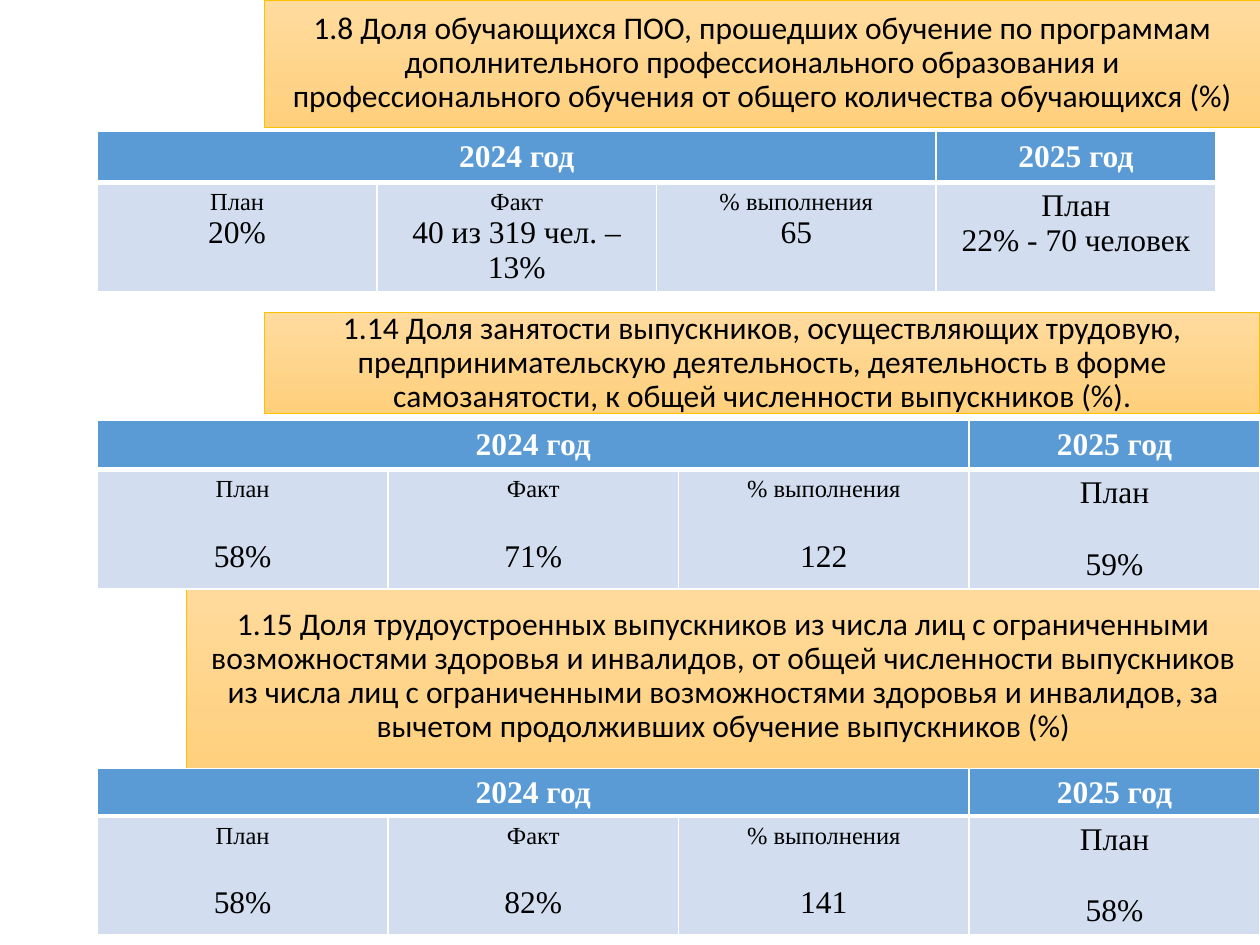
import pptx
import pptx.util
import pptx.dml.color
import pptx.enum.shapes
import pptx.enum.text
import pptx.oxml
import pptx.oxml.ns

Pt = pptx.util.Pt
CENTER = pptx.enum.text.PP_ALIGN.CENTER
MIDDLE = pptx.enum.text.MSO_ANCHOR.MIDDLE


def color(value):
    return pptx.dml.color.RGBColor.from_string(value)


class Deck:
    """Holds the style and the current slide, and draws its banners and tables."""

    black, white, gold = "000000", "FFFFFF", "FFC000"
    banner_top, banner_bottom = "FFDB9E", "FFD07C"
    head_fill, body_fill = "5B9BD5", "D2DEEF"
    heading_font, table_font = "Calibri", "Times New Roman"
    size, small = 18, 14

    def __init__(self, width, height):
        self.prs = pptx.Presentation()
        self.prs.slide_width, self.prs.slide_height = Pt(width), Pt(height)
        self.s = self.prs.slides.add_slide(self.prs.slide_layouts[5])

    def run(self, p, text, font, size, fill, bold=False):
        p.alignment = CENTER
        r = p.add_run()
        r.text = text
        r.font.name, r.font.size, r.font.bold = font, Pt(size), bold
        r.font.color.rgb = color(fill)

    def format_banner(self, sp, text):
        sp.fill.gradient()
        sp.fill.gradient_angle = 270
        for stop, value in zip(sp.fill.gradient_stops, (self.banner_top, self.banner_bottom)):
            stop.color.rgb = color(value)
        sp.line.color.rgb = color(self.gold)
        sp.line.width = Pt(0.5)
        tf = sp.text_frame
        tf.word_wrap = True
        tf.auto_size = pptx.enum.text.MSO_AUTO_SIZE.NONE
        tf.vertical_anchor = MIDDLE
        p = tf.paragraphs[0]
        p.line_spacing = 0.9
        self.run(p, text, self.heading_font, self.size, self.black)

    def title(self, x, y, w, h, text):
        sp = self.s.shapes.title
        sp.left, sp.top, sp.width, sp.height = Pt(x), Pt(y), Pt(w), Pt(h)
        self.format_banner(sp, text)

    def banner(self, x, y, w, h, text):
        rect = pptx.enum.shapes.MSO_SHAPE.RECTANGLE
        sp = self.s.shapes.add_shape(rect, Pt(x), Pt(y), Pt(w), Pt(h))
        sp.shadow.inherit = False
        self.format_banner(sp, text)

    def format_cell(self, cell, fill, top, bottom):
        tcPr = cell._tc.get_or_add_tcPr()
        for side, width in (("L", 1), ("R", 1), ("T", top), ("B", bottom)):
            tcPr.append(pptx.oxml.parse_xml(
                f'<a:ln{side} {pptx.oxml.ns.nsdecls("a")} w="{Pt(width)}"><a:solidFill>'
                f'<a:srgbClr val="{self.white}"/></a:solidFill></a:ln{side}>'))
        cell.fill.solid()
        cell.fill.fore_color.rgb = color(fill)

    def table(self, x, y, w, h, row_heights, values, gap=0):
        frame = self.s.shapes.add_table(2, 4, Pt(x), Pt(y), Pt(w), Pt(h))
        table = frame.table
        table.horz_banding = False
        for row, height in zip(table.rows, row_heights):
            row.height = Pt(height)
        frame.height = Pt(h)
        for col in range(4):
            self.format_cell(table.cell(0, col), self.head_fill, 1, 3)
            self.format_cell(table.cell(1, col), self.body_fill, 3, 1)
        table.cell(0, 0).merge(table.cell(0, 2))
        for col, year in ((0, "2024 год"), (3, "2025 год")):
            cell = table.cell(0, col)
            cell.vertical_anchor = MIDDLE
            self.run(cell.text_frame.paragraphs[0], year, self.table_font, self.size, self.white, True)
        labels = ("План", "Факт", "% выполнения", "План")
        sizes = (self.small,) * 3 + (self.size,)
        for col, (label, size, value) in enumerate(zip(labels, sizes, values)):
            tf = table.cell(1, col).text_frame
            self.run(tf.paragraphs[0], label, self.table_font, size, self.black)
            p = tf.add_paragraph()
            p.space_before = Pt(gap)
            self.run(p, value, self.table_font, self.size, self.black)

    def save(self):
        self.prs.save("out.pptx")


def main():
    deck = Deck(720, 540)
    line = 20.7
    deck.title(151.2, 0, 568.8, 72.7,
               "1.8 Доля обучающихся ПОО, прошедших обучение по программам дополнительного "
               "профессионального образования и профессионального обучения от общего "
               "количества обучающихся (%)")
    deck.table(55.6, 75, 639.2, 96.5, (29.2, 29.2),
               ("20%", "40 из 319 чел. – 13%", "65", "22% - 70 человек"))
    deck.banner(151.2, 178.6, 568.8, 57.4,
                "1.14 Доля занятости выпускников, осуществляющих трудовую, предпринимательскую "
                "деятельность, деятельность в форме самозанятости, к общей численности "
                "выпускников (%).")
    deck.banner(106.6, 329, 613.4, 115.2,
                "1.15 Доля трудоустроенных выпускников из числа лиц с ограниченными "
                "возможностями здоровья и инвалидов, от общей численности выпускников из числа "
                "лиц с ограниченными возможностями здоровья и инвалидов, за вычетом "
                "продолживших обучение выпускников (%)")
    deck.table(55.6, 240.2, 664.4, 100.8, (28.1, 68.4), ("58%", "71%", "122", "59%"), line)
    deck.table(55.6, 439.2, 664.4, 100.8, (21.6, 53.3), ("58%", "82%", "141", "58%"), line)
    deck.save()


if __name__ == "__main__":
    main()
